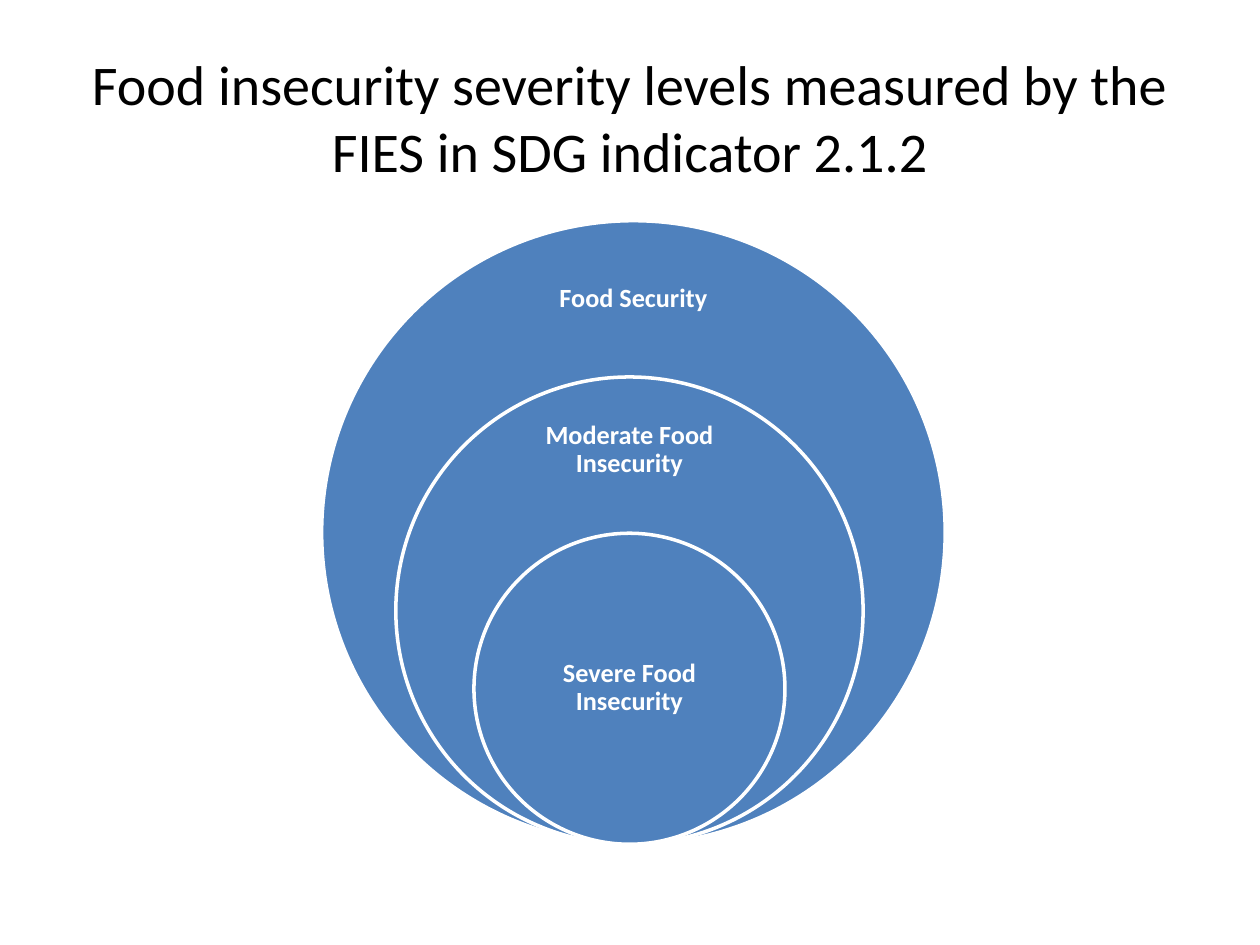
"""Build a slide of nested circles showing food insecurity severity levels."""
from pptx import Presentation
from pptx.dml.color import RGBColor
from pptx.enum.shapes import MSO_SHAPE as Shape
from pptx.enum.text import MSO_ANCHOR as Anchor, PP_ALIGN as Align
from pptx.util import Cm, Pt

TITLE = "Food insecurity severity levels measured by the FIES in SDG indicator 2.1.2"
# text, circle centre x, diameter, label top, label width, label height
LEVELS = [
    ("Food Security", 12.77, 12.57, 5.08, 4.39, 1.88),
    ("Moderate Food Insecurity", 12.69, 9.42, 8.18, 4.39, 1.78),
    ("Severe Food Insecurity", 12.69, 6.27, 12.29, 4.45, 3.15),
]
BOTTOM = 17.02
BLUE, WHITE, BLACK = "4F81BD", "FFFFFF", "000000"


def rgb(color):
    return RGBColor.from_string(color)


def add_text(s, text, x, y, w, h, size, color, bold=False, inset=0.25, spacing=1.0):
    tf = s.shapes.add_textbox(Cm(x), Cm(y), Cm(w), Cm(h)).text_frame
    tf.word_wrap = True
    tf.vertical_anchor = Anchor.MIDDLE
    tf.margin_left = tf.margin_right = tf.margin_top = tf.margin_bottom = Cm(inset)
    p = tf.paragraphs[0]
    p.alignment = Align.CENTER
    p.line_spacing = spacing
    r = p.add_run()
    r.text = text
    r.font.name, r.font.size, r.font.bold = "Calibri", Pt(size), bold
    r.font.color.rgb = rgb(color)


def add_circle(s, center, diameter):
    sp = s.shapes.add_shape(Shape.OVAL, Cm(center - diameter / 2), Cm(BOTTOM - diameter),
                            Cm(diameter), Cm(diameter))
    sp.shadow.inherit = False
    sp.fill.solid()
    sp.fill.fore_color.rgb = rgb(BLUE)
    sp.line.color.rgb = rgb(WHITE)
    sp.line.width = Pt(2)


def main():
    prs = Presentation()
    prs.slide_width, prs.slide_height = Cm(25.4), Cm(19.05)
    s = prs.slides.add_slide(prs.slide_layouts[6])
    add_text(s, TITLE, 1.27, 0.76, 22.86, 3.18, size=32, color=BLACK, inset=0.13)
    for text, center, diameter, top, width, height in LEVELS:
        add_circle(s, center, diameter)
        add_text(s, text, center - width / 2, top, width, height,
                 size=15, color=WHITE, bold=True, inset=0.3, spacing=0.9)
    prs.save("out.pptx")


if __name__ == "__main__":
    main()
